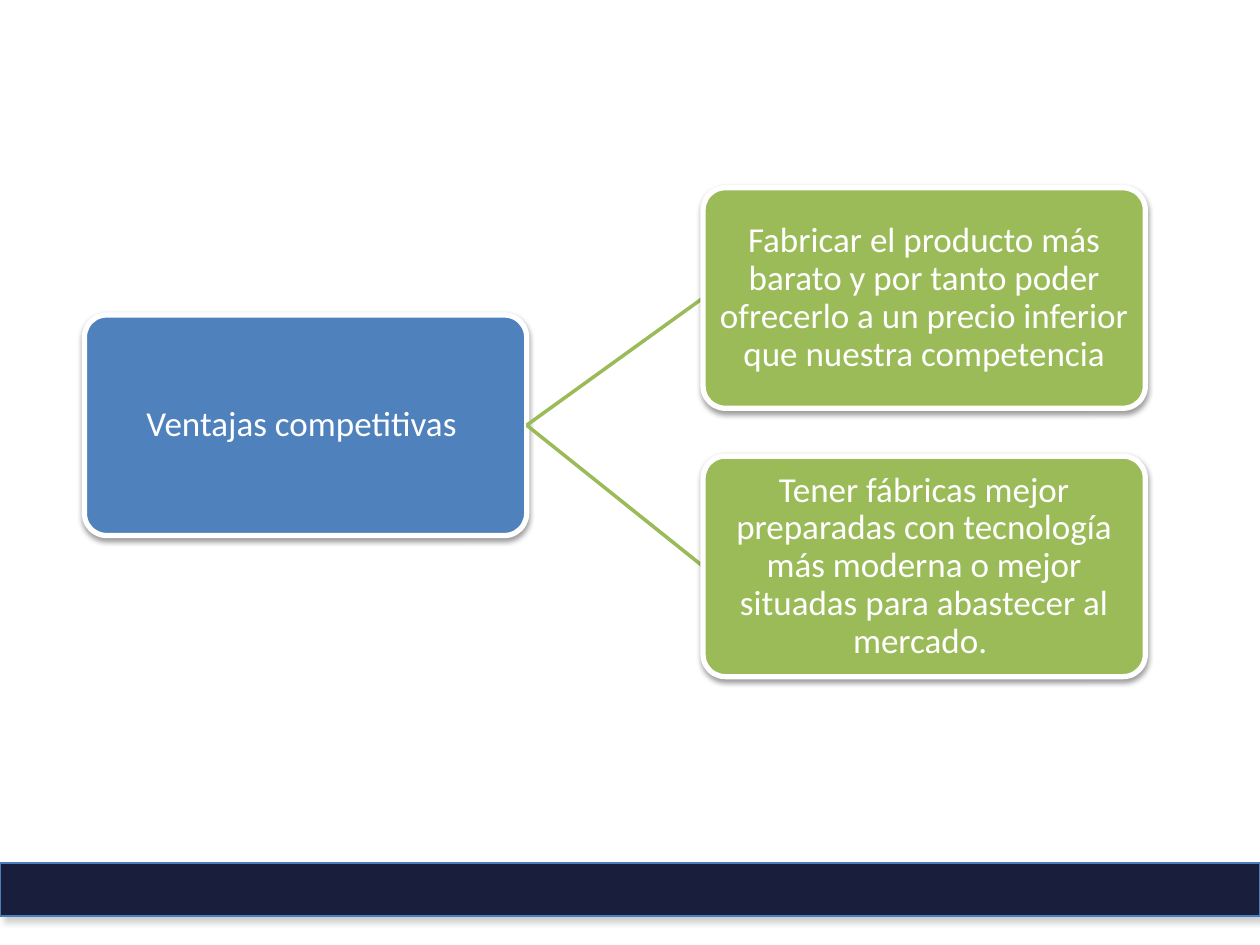
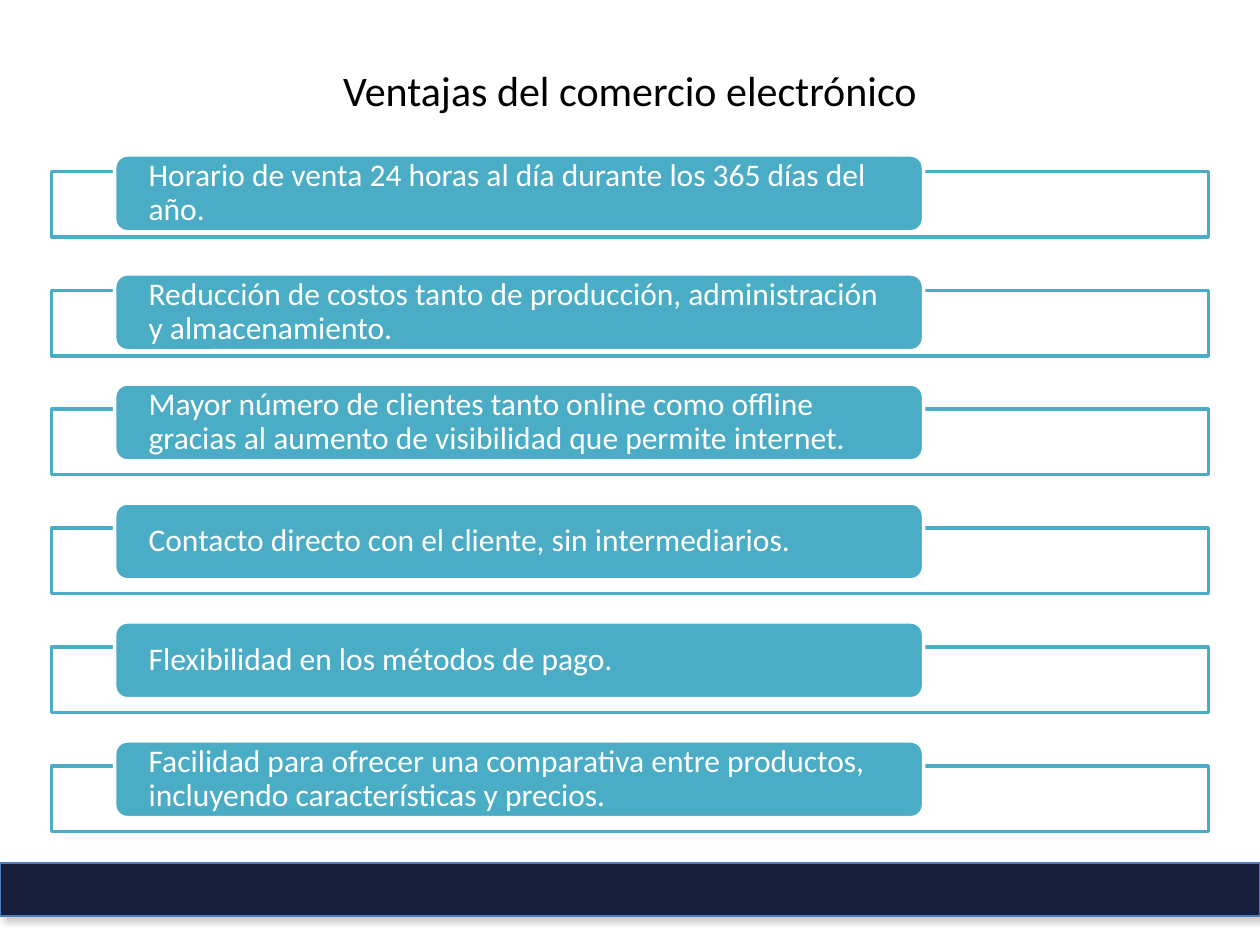
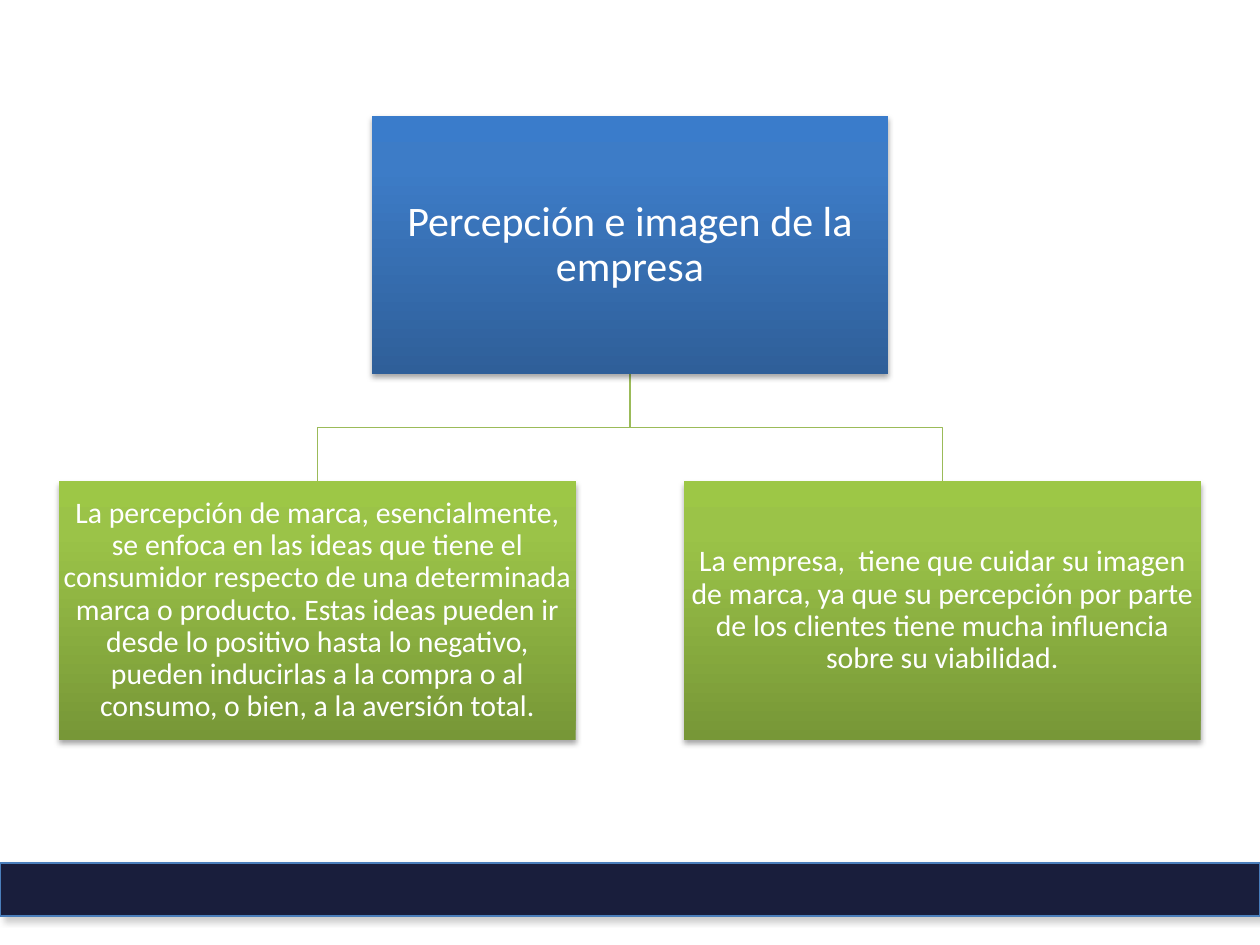
from copy import deepcopy
from dataclasses import dataclass
from typing import NamedTuple

from lxml import etree
from pptx import Presentation
from pptx.dml.color import RGBColor
from pptx.enum.shapes import MSO_CONNECTOR, MSO_SHAPE
from pptx.enum.text import MSO_ANCHOR, PP_ALIGN
from pptx.oxml.ns import qn
from pptx.util import Inches, Pt

RECT, ROUNDED = MSO_SHAPE.RECTANGLE, MSO_SHAPE.ROUNDED_RECTANGLE
STRAIGHT = MSO_CONNECTOR.STRAIGHT
LEFT, CENTER, MIDDLE = PP_ALIGN.LEFT, PP_ALIGN.CENTER, MSO_ANCHOR.MIDDLE
SITE_LEFT, SITE_RIGHT = 1, 3


class Box(NamedTuple):
    left: float
    top: float
    width: float
    height: float

    @property
    def right(self):
        return self.left + self.width

    @property
    def bottom(self):
        return self.top + self.height

    @property
    def center(self):
        return self.left + self.width / 2

    @property
    def middle(self):
        return self.top + self.height / 2


class Shadow(NamedTuple):
    color: str
    opacity: int
    blur: float
    distance: float
    angle: int


@dataclass(frozen=True)
class Theme:
    font: str = "Calibri"
    black: str = "000000"
    white: str = "FFFFFF"
    navy: str = "191E3C"
    band_edge: str = "4A7EBB"
    blue: str = "4F81BD"
    green: str = "9BBB59"
    teal: str = "4BACC6"
    blue_fade: tuple = ((0, "2F5F99"), (0.8, "3D7CC7"), (1, "3A7CCB"))
    green_fade: tuple = ((0, "779737"), (0.8, "9BC348"), (1, "9DC746"))
    title_size: int = 24
    branch_size: int = 20
    list_size: int = 18
    detail_size: int = 17
    band_shadow: Shadow = Shadow("808080", 40, 4, 3, 45)
    branch_shadow: Shadow = Shadow("000000", 38, 3.1, 1.6, 90)
    tree_shadow: Shadow = Shadow("000000", 35, 3.1, 1.8, 90)


THEME = Theme()
SLIDE = Box(0, 0, 10, 7.5)
BAND = Box(0, 6.85, SLIDE.width, 0.42)
TITLE = Box(2.6, 0.36, 4.8, 0.71)


def inches(*lengths):
    return [Inches(length) for length in lengths]


def add_alpha(color_element, percent):
    etree.SubElement(color_element, qn("a:alpha"), val=str(percent * 1000))


def cast_shadow(shape, shadow):
    effects = shape._element.spPr.find(qn("a:effectLst"))
    outer = etree.SubElement(
        effects, qn("a:outerShdw"), blurRad=str(Pt(shadow.blur)),
        dist=str(Pt(shadow.distance)), dir=str(shadow.angle * 60000),
        rotWithShape="0")
    add_alpha(etree.SubElement(outer, qn("a:srgbClr"), val=shadow.color),
              shadow.opacity)


def fade(shape, stops):
    """Fill with a gradient of (position, colour) stops running upwards."""
    shape.fill.gradient()
    shape.fill.gradient_angle = 90
    stop_list = shape._element.spPr.find(".//" + qn("a:gsLst"))
    while len(stop_list) < len(stops):
        stop_list.append(deepcopy(stop_list[0]))
    for stop, (position, color) in zip(shape.fill.gradient_stops, stops):
        stop.position = position
        stop.color.rgb = RGBColor.from_string(color)


def set_line(shape, color, width):
    shape.line.color.rgb = RGBColor.from_string(color)
    shape.line.width = Pt(width)


def add_block(slide, preset, box, fill, edge=None, edge_width=0, shadow=None):
    """Add a shape; fill is a colour or a tuple of gradient stops."""
    block = slide.shapes.add_shape(preset, *inches(*box))
    block.shadow.inherit = False
    if isinstance(fill, tuple):
        fade(block, fill)
    else:
        block.fill.solid()
        block.fill.fore_color.rgb = RGBColor.from_string(fill)
    if edge:
        set_line(block, edge, edge_width)
    else:
        block.line.fill.background()
    if shadow:
        cast_shadow(block, shadow)
    return block


def write(shape, text, size, color=THEME.white, align=CENTER,
          margins=(0.01, 0.01), spacing=0.9):
    """Set one paragraph; margins are (horizontal, vertical) in inches."""
    frame = shape.text_frame
    frame.text = text
    frame.word_wrap = True
    frame.vertical_anchor = MIDDLE
    frame.margin_left = frame.margin_right = Inches(margins[0])
    frame.margin_top = frame.margin_bottom = Inches(margins[1])
    paragraph = frame.paragraphs[0]
    paragraph.alignment = align
    paragraph.line_spacing = spacing
    font = paragraph.runs[0].font
    font.name, font.size = THEME.font, Pt(size)
    font.color.rgb = RGBColor.from_string(color)


def add_link(slide, start, end):
    link = slide.shapes.add_connector(STRAIGHT, *inches(*start, *end))
    set_line(link, THEME.green, 2)
    etree.SubElement(link._element.spPr, qn("a:effectLst"))
    return link


def add_elbow(slide, parent, child):
    """Draw an open outline from the parent's bottom to the child's top."""
    fork = (parent.bottom + child.top) / 2
    start, *turns = [inches(*point) for point in (
        (parent.center, parent.bottom), (parent.center, fork),
        (child.center, fork), (child.center, child.top))]
    builder = slide.shapes.build_freeform(*start)
    builder.add_line_segments(turns, close=False)
    elbow = builder.convert_to_shape()
    elbow.shadow.inherit = False
    elbow.fill.background()
    set_line(elbow, THEME.green, 0.75)


def add_banded_slide(deck):
    slide = deck.slides.add_slide(deck.slide_layouts[6])
    add_block(slide, RECT, BAND, THEME.navy, THEME.band_edge, 0.75,
              THEME.band_shadow)
    return slide


def add_title(slide, text):
    title = slide.shapes.add_textbox(*inches(*TITLE))
    write(title, text, THEME.title_size, THEME.black,
          margins=(0.1, 0.05), spacing=1)


def add_branches(slide, area, topic, advantages):
    """Topic on the left, linked to advantages stacked on the right."""
    width, height, topic_drop = 3.51, 1.75, 1.01

    def add_card(box, fill, text):
        card = add_block(slide, ROUNDED, box, fill, THEME.white, 3,
                         THEME.branch_shadow)
        card.adjustments[0] = 0.1
        write(card, text, THEME.branch_size)
        return card

    topic_box = Box(area.left, area.top + topic_drop, width, height)
    topic_card = add_card(topic_box, THEME.blue, topic)
    step = (area.height - height) / (len(advantages) - 1)
    for index, advantage in enumerate(advantages):
        box = Box(area.right - width, area.top + index * step, width, height)
        link = add_link(slide, (topic_box.right, topic_box.middle),
                        (box.left, box.middle))
        card = add_card(box, THEME.green, advantage)
        link.begin_connect(topic_card, SITE_RIGHT)
        link.end_connect(card, SITE_LEFT)


def add_label_list(slide, area, entries):
    """Outlined rows, each with a label raised above its top edge."""
    row_height, label_indent = 0.52, 0.5
    label_width, label_height = 6.42, 0.61
    step = (area.height - row_height) / (len(entries) - 1)
    for index, (text, lift) in enumerate(entries):
        top = area.top + index * step
        row = add_block(slide, RECT,
                        Box(area.left, top, area.width, row_height),
                        THEME.white, THEME.teal, 2)
        add_alpha(row._element.spPr.find(
            qn("a:solidFill") + "/" + qn("a:srgbClr")), 90)
        label = add_block(slide, ROUNDED,
                          Box(area.left + label_indent, top - lift,
                              label_width, label_height),
                          THEME.teal, THEME.white, 2)
        write(label, text, THEME.list_size, align=LEFT, margins=(0.24, 0))


def add_tree(slide, area, topic, details):
    """Topic centred on top, with details spread along the bottom."""
    width, height = 4.1, 2.05
    topic_box = Box(area.center - width / 2, area.top, width, height)
    step = (area.width - width) / (len(details) - 1)
    detail_boxes = [Box(area.left + index * step, area.bottom - height,
                        width, height) for index in range(len(details))]

    for box in reversed(detail_boxes):
        add_elbow(slide, topic_box, box)
    topic_block = add_block(slide, RECT, topic_box, THEME.blue_fade,
                            shadow=THEME.tree_shadow)
    write(topic_block, topic, THEME.title_size, margins=(0.02, 0.02))
    for box, detail in zip(detail_boxes, details):
        block = add_block(slide, RECT, box, THEME.green_fade,
                          shadow=THEME.tree_shadow)
        write(block, detail, THEME.detail_size)


def main():
    deck = Presentation()
    deck.slide_width, deck.slide_height = inches(SLIDE.width, SLIDE.height)

    add_branches(
        add_banded_slide(deck), Box(0.67, 1.49, 8.42, 3.88),
        "Ventajas competitivas ",
        ["Fabricar el producto más barato y por tanto poder ofrecerlo a un "
         "precio inferior que nuestra competencia",
         "Tener fábricas mejor preparadas con tecnología más moderna o mejor "
         "situadas para abastecer al mercado. "])

    commerce = add_banded_slide(deck)
    add_title(commerce, "Ventajas del comercio electrónico")
    add_label_list(
        commerce, Box(0.41, 1.36, 9.18, 5.24),
        [("Horario de venta 24 horas al día durante los 365 días del año.",
          0.13),
         ("Reducción de costos tanto de producción, administración y "
          "almacenamiento.", 0.13),
         ("Mayor número de clientes tanto online como offline gracias al "
          "aumento de visibilidad que permite internet.", 0.2),
         ("Contacto directo con el cliente, sin intermediarios.", 0.2),
         ("Flexibilidad en los métodos de pago.", 0.2),
         ("Facilidad para ofrecer una comparativa entre productos, "
          "incluyendo características y precios.", 0.2)])

    add_tree(
        add_banded_slide(deck), Box(0.47, 0.92, 9.06, 4.95),
        "Percepción e imagen de la empresa",
        ["La percepción de marca, esencialmente, se enfoca en las ideas que "
         "tiene el consumidor respecto de una determinada marca o producto. "
         "Estas ideas pueden ir desde lo positivo hasta lo negativo, pueden "
         "inducirlas a la compra o al consumo, o bien, a la aversión total.",
         "La empresa,  tiene que cuidar su imagen de marca, ya que su "
         "percepción por parte de los clientes tiene mucha influencia sobre "
         "su viabilidad."])

    deck.save("out.pptx")


if __name__ == "__main__":
    main()
